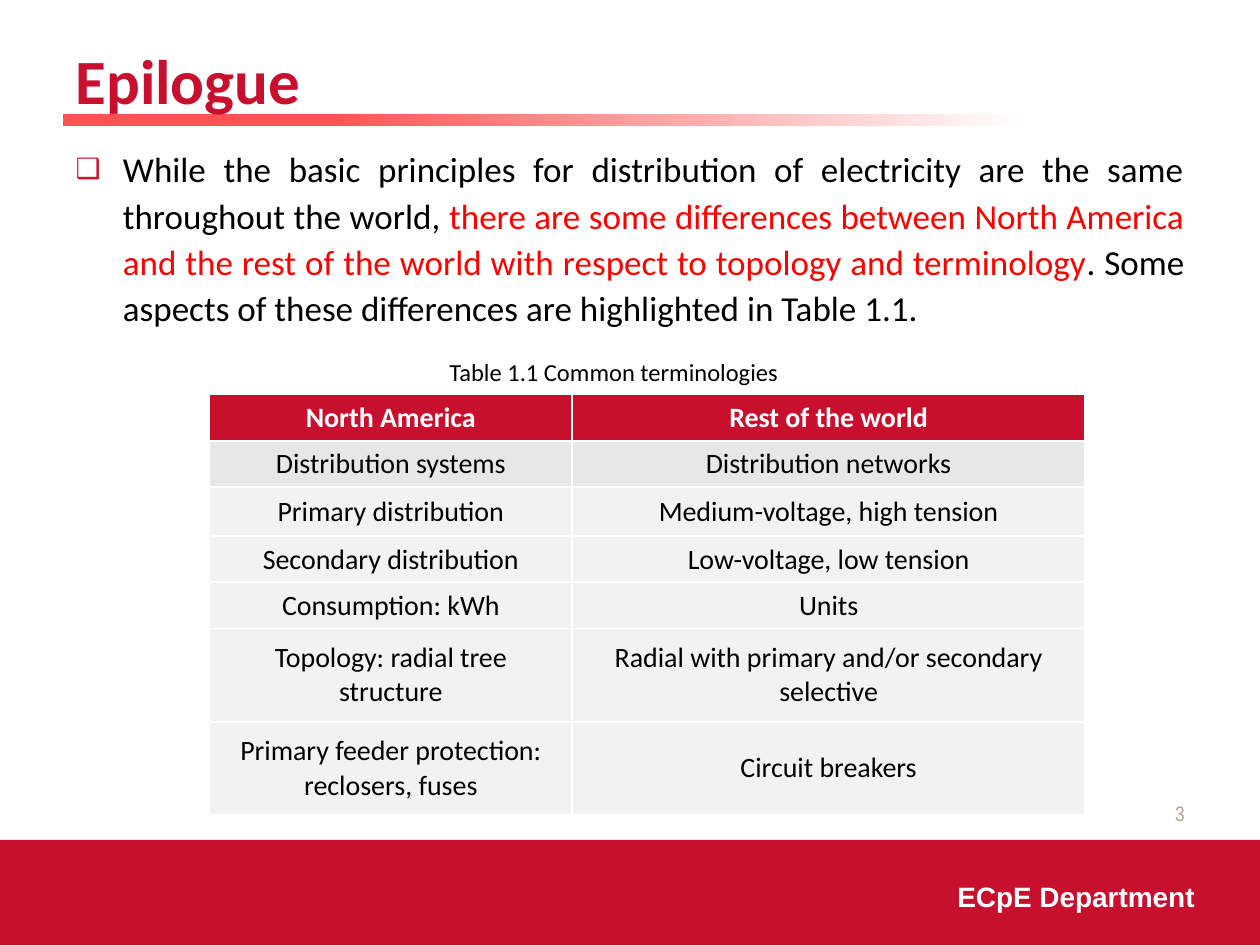
from copy import deepcopy
from dataclasses import dataclass

from lxml.etree import SubElement
from pptx import Presentation
from pptx.dml.color import RGBColor
from pptx.enum.shapes import MSO_SHAPE
from pptx.enum.text import MSO_ANCHOR, MSO_AUTO_SIZE, PP_ALIGN
from pptx.oxml.ns import qn
from pptx.util import Pt


@dataclass(frozen=True)
class Theme:
    """Colours, fonts and type sizes of the deck."""
    brand: str = "C8102E"
    bullet: str = "CE1126"
    accent: str = "FF0000"
    ink: str = "000000"
    white: str = "FFFFFF"
    muted: str = "ACA39A"
    band: str = "E7E7E7"
    row: str = "F2F2F2"
    fade: tuple = ((0.23, "FF5252"), (0.54, "FFA9A9"), (0.85, "FFFFFF"))
    font: str = "Calibri"
    title: int = 36
    body: int = 20
    label: int = 16
    caption: int = 14
    number: int = 12


THEME = Theme()
ROWS = (
    ("North America", "Rest of the world"),
    ("Distribution systems", "Distribution networks"),
    ("Primary distribution", "Medium-voltage, high tension"),
    ("Secondary distribution", "Low-voltage, low tension"),
    ("Consumption: kWh", "Units"),
    ("Topology: radial tree structure", "Radial with primary and/or secondary\nselective"),
    ("Primary feeder protection: reclosers, fuses", "Circuit breakers"),
)
ROW_HEIGHTS = (26, 26, 28, 26, 26, 53.3, 53.3)
COLUMN_WIDTHS = (207.3, 293)


def rgb(value):
    """Return the colour object for a hex string."""
    return RGBColor.from_string(value)


def write(p, text, size=THEME.label, color=THEME.ink, font=THEME.font, bold=False, align=None):
    """Add a formatted run to a paragraph."""
    r = p.add_run()
    r.text = text
    r.font.size, r.font.name, r.font.bold = Pt(size), font, bold
    r.font.color.rgb = rgb(color)
    if align is not None:
        p.alignment = align


def place(sp, box):
    """Move and size a shape to a box in points."""
    sp.left, sp.top, sp.width, sp.height = (Pt(v) for v in box)


def add_label(s, box, text, anchor=MSO_ANCHOR.TOP, **fmt):
    """Add a one-line text box."""
    tf = s.shapes.add_textbox(*(Pt(v) for v in box)).text_frame
    tf.word_wrap, tf.vertical_anchor = True, anchor
    write(tf.paragraphs[0], text, **fmt)


def add_bar(s, box):
    """Add a plain rectangle behind everything else."""
    sp = s.shapes.add_shape(MSO_SHAPE.RECTANGLE, *(Pt(v) for v in box))
    sp.shadow.inherit = False
    sp.line.fill.background()
    s.shapes._spTree.insert(2, sp._element)
    return sp


def add_footer(s, box):
    """Add the footer band with the department name."""
    left, top, width, height = box
    sp = add_bar(s, box)
    sp.fill.solid()
    sp.fill.fore_color.rgb = rgb(THEME.brand)
    add_label(s, (left + width - 180, top + 19, 174, 30), "ECpE Department",
              color=THEME.white, font="Arial", bold=True)


def add_title(s, box, text):
    """Fill the title placeholder and underline it with a fading rule."""
    left, top, width, height = box
    sp = s.shapes.title
    place(sp, box)
    tf = sp.text_frame
    tf.auto_size, tf.vertical_anchor = MSO_AUTO_SIZE.NONE, MSO_ANCHOR.MIDDLE
    write(tf.paragraphs[0], text, size=THEME.title, color=THEME.brand, bold=True,
          align=PP_ALIGN.LEFT)
    rule = add_bar(s, (left, top + height - 13.5, 648, 7.2))
    rule.fill.gradient()
    rule.fill.gradient_angle = 0
    stops = rule._element.spPr.find(".//" + qn("a:gsLst"))
    stops.insert(1, deepcopy(stops[0]))
    for stop, (position, color) in zip(rule.fill.gradient_stops, THEME.fade):
        stop.position, stop.color.rgb = position, rgb(color)


def add_body(s, box, runs):
    """Fill the body placeholder with one justified bullet."""
    sp = s.placeholders[1]
    place(sp, box)
    tf = sp.text_frame
    tf.auto_size = MSO_AUTO_SIZE.NONE
    p = tf.paragraphs[0]
    pPr = p._p.get_or_add_pPr()
    pPr.set("marL", str(Pt(27)))
    pPr.set("indent", str(Pt(-27)))
    SubElement(SubElement(pPr, qn("a:buClr")), qn("a:srgbClr"), val=THEME.bullet)
    SubElement(pPr, qn("a:buSzPct"), val="80000")
    SubElement(pPr, qn("a:buFont"), typeface="Arial")
    SubElement(pPr, qn("a:buChar"), char="❑")
    p.line_spacing, p.space_before, p.space_after = 1.1, Pt(0), Pt(6)
    for text, color in runs:
        write(p, text, size=THEME.body, color=color, align=PP_ALIGN.JUSTIFY)


def format_cell(cell, text, fill, **fmt):
    """Write a centred cell with its fill and white borders."""
    tcPr = cell._tc.get_or_add_tcPr()
    for side in ("lnL", "lnR", "lnT", "lnB"):
        ln = SubElement(tcPr, qn("a:" + side), w=str(Pt(1.08)))
        SubElement(SubElement(ln, qn("a:solidFill")), qn("a:srgbClr"), val=THEME.white)
    cell.fill.solid()
    cell.fill.fore_color.rgb = rgb(fill)
    cell.vertical_anchor = MSO_ANCHOR.MIDDLE
    tf = cell.text_frame
    for i, line in enumerate(text.split("\n")):
        p = tf.add_paragraph() if i else tf.paragraphs[0]
        write(p, line, align=PP_ALIGN.CENTER, **fmt)


def add_terms(s, box):
    """Add the captioned table of terms."""
    left, top, width, height = box
    add_label(s, (left + 112.3, top, 237.6, 24.5), "Table 1.1 Common terminologies",
              size=THEME.caption, align=PP_ALIGN.CENTER)
    table = s.shapes.add_table(len(ROWS), len(COLUMN_WIDTHS), Pt(left), Pt(top + 25.3),
                               Pt(width), Pt(height - 25.3)).table
    for column, w in zip(table.columns, COLUMN_WIDTHS):
        column.width = Pt(w)
    for i, (row, h, texts) in enumerate(zip(table.rows, ROW_HEIGHTS, ROWS)):
        row.height = Pt(h)
        fill = (THEME.brand, THEME.band)[i] if i < 2 else THEME.row
        for cell, text in zip(row.cells, texts):
            format_cell(cell, text, fill, bold=i == 0,
                        color=THEME.ink if i else THEME.white)


def main():
    """Build and save the slide."""
    prs = Presentation()
    prs.slide_width, prs.slide_height = Pt(720), Pt(540)
    s = prs.slides.add_slide(prs.slide_layouts[1])
    add_title(s, (36, 12.2, 667.4, 66.2), "Epilogue")
    add_body(s, (36, 78.5, 648, 120.2), (
        ("While the basic principles for distribution of electricity are the same "
         "throughout the world, ", THEME.ink),
        ("there are some differences between North America and the rest of the world "
         "with respect to topology and terminology", THEME.accent),
        (". Some aspects of these differences are highlighted in Table 1.1.", THEME.ink),
    ))
    add_label(s, (516, 450, 168, 28.8), "3", anchor=MSO_ANCHOR.MIDDLE, size=THEME.number,
              color=THEME.muted, font="Arial Narrow", align=PP_ALIGN.RIGHT)
    add_footer(s, (0, 480, 720, 60))
    add_terms(s, (119.7, 200.2, sum(COLUMN_WIDTHS), 265))
    prs.save("out.pptx")


if __name__ == "__main__":
    main()
